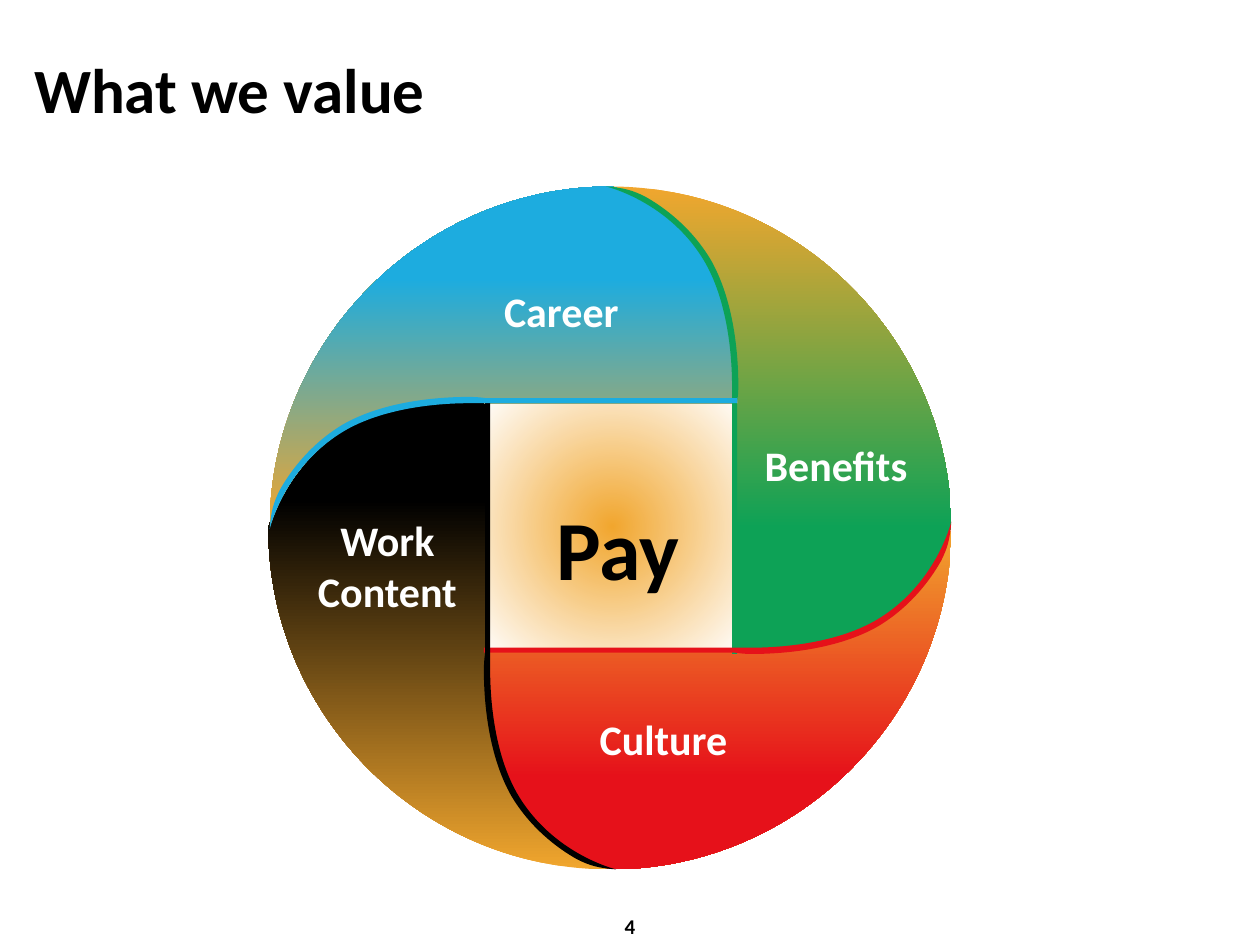
from lxml.etree import SubElement
from pptx import Presentation
from pptx.dml.color import RGBColor
from pptx.enum.shapes import MSO_SHAPE as Shape
from pptx.enum.text import MSO_ANCHOR as Anchor, PP_ALIGN as Align
from pptx.oxml.ns import qn
from pptx.util import Inches, Pt

THEME = {
    "font": "Calibri",
    "black": "000000", "white": "FFFFFF", "gold": "F1A62E",
    "green": "0DA256", "red": "E6111A", "blue": "1DACDF",
    "title": 36, "core": 48, "label": 24, "number": 12,
}
CENTER = (4.84, 4.19)
DOWN, UP = 270, 90

TITLE = ("What we value", (0.17, 0.08, 9.67, 1.25))
CORE_BOX = (3.84, 3.16, 2.04, 2.04)

# Clockwise quarter turns: colour, stop, direction, petal shift, band shift
PETALS = [
    ("green", 0.73, DOWN, (0, 0), (0, 0)),
    ("red", 0.73, DOWN, (0, 0), (0, -0.02)),
    ("black", 0.79, UP, (0, 0), (0.02, 0)),
    ("blue", 0.73, UP, (0.01, 0), (0.01, -0.02)),
]
LABELS = [
    ("Pay", (3.93, 3.89, 1.95, 0.46), "core", "black", Anchor.TOP),
    ("Benefits", (5.66, 3.44, 1.95, 0.46), "label", "white", Anchor.TOP),
    ("Career", (3.48, 2.22, 1.95, 0.46), "label", "white", Anchor.TOP),
    ("Culture", (4.29, 5.61, 1.95, 0.46), "label", "white", Anchor.TOP),
    ("Work Content", (2.31, 3.95, 1.53, 1.07), "label", "white", Anchor.MIDDLE),
    ("4", (0, 7.2, 10, 0.3), "number", "black", Anchor.TOP),
]

# Outlines relative to the centre: one point is a line, three points a curve
PETAL_OUTLINE = [
    [(0, -2.71)],
    [(0, -2.71), (0.5, -2.59), (0.79, -2.1)],
    [(1.05, -1.65), (0.99, -0.99), (0.99, -0.99)],
    [(0.99, 1)],
    [(0.99, 1), (1.65, 1.05), (2.1, 0.79)],
    [(2.59, 0.5), (2.71, 0), (2.71, 0)],
    [(2.71, -1.49), (1.49, -2.71), (0, -2.71)],
]
BAND_OUTLINE = [
    [(1.02, -1.13)],
    [(1.02, -1.36), (0.99, -1.8), (0.8, -2.13)],
    [(0.65, -2.38), (0.44, -2.54), (0.28, -2.63)],
    [(0.18, -2.68), (0.11, -2.7), (-0.03, -2.71)],
    [(-0.03, -2.71), (0.48, -2.59), (0.76, -2.1)],
    [(0.94, -1.78), (0.97, -1.35), (0.97, -1.13)],
    [(0.97, 1)],
    [(1.01, 1)],
    [(1.01, -0.99)],
    [(1.01, -1), (1.02, -1.05), (1.02, -1.13)],
]


def color(name):
    return RGBColor.from_string(THEME[name])


def place(point, turns, shift):
    x, y = point
    for _ in range(turns):
        x, y = -y, x
    return Inches(CENTER[0] + x + shift[0]), Inches(CENTER[1] + y + shift[1])


def bend(shape, segments):
    lines = list(shape.element.iter(qn("a:lnTo")))
    for line, segment in zip(lines, segments):
        if len(segment) == 1:
            continue
        line.tag = qn("a:cubicBezTo")
        line.remove(line[0])
        for x, y in segment:
            SubElement(line, qn("a:pt"), x=str(x - shape.left), y=str(y - shape.top))


def add_outline(slide, outline, turns, shift):
    segments = [[place(point, turns, shift) for point in segment] for segment in outline]
    start, *ends = [segment[-1] for segment in segments]
    builder = slide.shapes.build_freeform(*start)
    builder.add_line_segments(ends, close=True)
    shape = plain(builder.convert_to_shape())
    curved = shape.element
    for line in list(curved.iter(qn("a:lnTo")))[len(ends):]:
        line.getparent().remove(line)
    replace_curves(shape, segments[1:])
    return shape


def replace_curves(shape, segments):
    outline = next(shape.element.iter(qn("a:pathLst")))[0]
    for line, segment in zip(list(outline.iter(qn("a:lnTo"))), segments):
        if len(segment) == 1:
            continue
        curve = SubElement(outline, qn("a:cubicBezTo"))
        for x, y in segment:
            SubElement(curve, qn("a:pt"), x=str(x - shape.left), y=str(y - shape.top))
        outline.replace(line, curve)


def plain(shape):
    shape.shadow.inherit = False
    shape.line.fill.background()
    return shape


def set_gradient(shape, start, end, stop=1.0, angle=DOWN):
    shape.fill.gradient()
    shape.fill.gradient_angle = angle
    stops = shape.fill.gradient_stops
    for gradient_stop, name, position in zip(stops, (start, end), (0, stop)):
        gradient_stop.color.rgb = color(name)
        gradient_stop.position = position


def make_radial(shape):
    gradient = shape.element.spPr.find(qn("a:gradFill"))
    gradient.remove(gradient.find(qn("a:lin")))
    radial = SubElement(gradient, qn("a:path"), {"path": "circle"})
    SubElement(radial, qn("a:fillToRect"), dict.fromkeys("ltrb", "50000"))


def write(shape, text, size="label", ink="black", align=Align.CENTER, anchor=Anchor.TOP):
    frame = shape.text_frame
    frame.word_wrap = True
    frame.vertical_anchor = anchor
    frame.text = text
    paragraph = frame.paragraphs[0]
    paragraph.alignment = align
    font = paragraph.runs[0].font
    font.name, font.size, font.bold = THEME["font"], Pt(THEME[size]), True
    font.color.rgb = color(ink)


def main():
    presentation = Presentation()
    presentation.slide_width, presentation.slide_height = Inches(10), Inches(7.5)
    slide = presentation.slides.add_slide(presentation.slide_layouts[5])

    text, box = TITLE
    title = slide.shapes.title
    title.left, title.top, title.width, title.height = map(Inches, box)
    write(title, text, size="title", align=Align.LEFT, anchor=Anchor.MIDDLE)

    core = plain(slide.shapes.add_shape(Shape.RECTANGLE, *map(Inches, CORE_BOX)))
    set_gradient(core, "gold", "white")
    make_radial(core)

    for turns, (name, stop, angle, shift, _) in enumerate(PETALS):
        petal = add_outline(slide, PETAL_OUTLINE, turns, shift)
        set_gradient(petal, "gold", name, stop, angle)
    for turns, (name, _, _, _, shift) in enumerate(PETALS):
        band = add_outline(slide, BAND_OUTLINE, turns, shift)
        band.fill.solid()
        band.fill.fore_color.rgb = color(name)

    for text, box, size, ink, anchor in LABELS:
        label = slide.shapes.add_textbox(*map(Inches, box))
        write(label, text, size=size, ink=ink, anchor=anchor)

    presentation.save("out.pptx")


if __name__ == "__main__":
    main()
